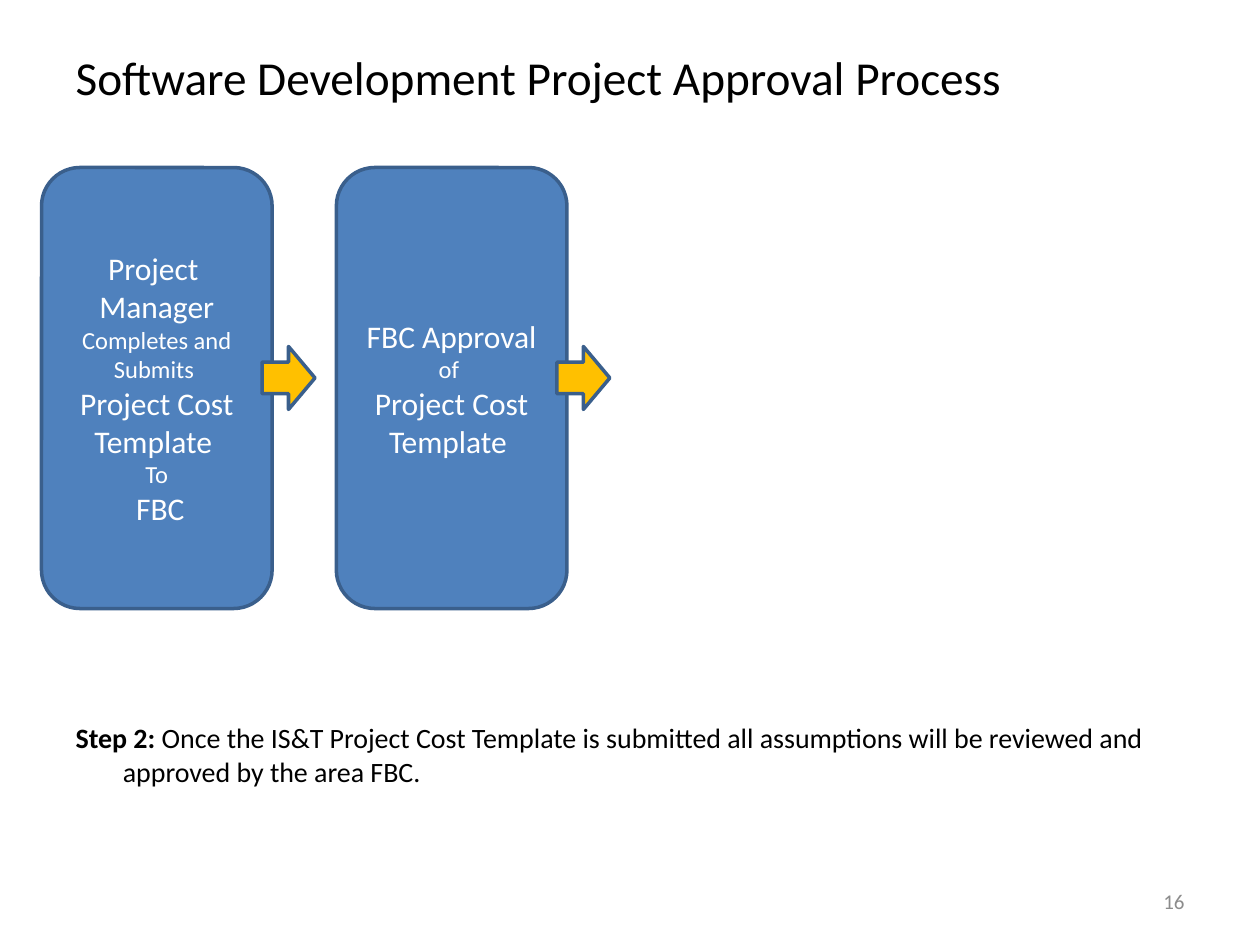
from lxml.etree import SubElement
from pptx import Presentation
from pptx.dml.color import RGBColor
from pptx.enum.shapes import MSO_SHAPE as Preset
from pptx.enum.text import MSO_ANCHOR as Anchor, MSO_AUTO_SIZE as AutoSize, PP_ALIGN as Align
from pptx.oxml.ns import qn
from pptx.util import Inches, Pt

FONT = "Calibri"
BLACK, WHITE, GREY = "000000", "FFFFFF", "8C8C8C"
BLUE, NAVY, GOLD = "4F81BD", "3A5F8C", "FFC000"

STEPS = [
    [
        [("Project  Manager ", 18), ("Completes and Submits ", 14)],
        [("Project Cost Template ", 18)],
        [("To", 14)],
        [(" FBC", 18)],
    ],
    [
        [("FBC Approval ", 18), ("of ", 14)],
        [("Project Cost Template ", 18)],
    ],
]


def color(hex_code):
    return RGBColor.from_string(hex_code)


def add_run(paragraph, words, size, ink, bold=False):
    run = paragraph.add_run()
    run.text = words
    run.font.name = FONT
    run.font.size = Pt(size)
    run.font.bold = bold
    run.font.color.rgb = color(ink)


def place(part, left, top, width, height):
    part.left, part.top = Inches(left), Inches(top)
    part.width, part.height = Inches(width), Inches(height)


def add_block(slide, preset, fill, left, top, width, height):
    block = slide.shapes.add_shape(
        preset, Inches(left), Inches(top), Inches(width), Inches(height))
    block.shadow.inherit = False
    block.fill.solid()
    block.fill.fore_color.rgb = color(fill)
    block.line.color.rgb = color(NAVY)
    block.line.width = Pt(2)
    return block


def add_heading(slide, left, top, width, height):
    heading = slide.shapes.title
    place(heading, left, top, width, height)
    frame = heading.text_frame
    frame.auto_size = AutoSize.NONE
    frame.vertical_anchor = Anchor.MIDDLE
    frame.paragraphs[0].alignment = Align.LEFT
    add_run(frame.paragraphs[0], "Software Development Project Approval Process", 27, BLACK)


def add_explanation(slide, left, top, width, height):
    explanation = slide.placeholders[1]
    place(explanation, left, top, width, height)
    frame = explanation.text_frame
    frame.auto_size = AutoSize.NONE
    paragraph = frame.paragraphs[0]
    SubElement(paragraph._p.get_or_add_pPr(), qn("a:buNone"))
    add_run(paragraph, "Step 2: ", 16, BLACK, bold=True)
    add_run(
        paragraph,
        "Once the IS&T Project Cost Template is submitted all assumptions "
        "will be reviewed and approved by the area FBC.",
        16, BLACK)


def add_step(slide, lines, left, top, width, height):
    card = add_block(slide, Preset.ROUNDED_RECTANGLE, BLUE, left, top, width, height)
    frame = card.text_frame
    frame.word_wrap = True
    frame.vertical_anchor = Anchor.MIDDLE
    for index, line in enumerate(lines):
        paragraph = frame.add_paragraph() if index else frame.paragraphs[0]
        paragraph.alignment = Align.CENTER
        for words, size in line:
            add_run(paragraph, words, size, WHITE)

    arrow_width, arrow_height, overlap = 0.42, 0.5, 0.08
    add_block(slide, Preset.RIGHT_ARROW, GOLD, left + width - overlap,
              top + (height - arrow_height) / 2 - 0.08, arrow_width, arrow_height)


def add_process(slide, left, top, width, height):
    step_width = 1.83
    pitch = (width - step_width) / (len(STEPS) - 1)
    for index, lines in enumerate(STEPS):
        add_step(slide, lines, left + index * pitch, top, step_width, height)


def add_page_number(slide, left, top, width, height):
    page_number = slide.shapes.add_textbox(
        Inches(left), Inches(top), Inches(width), Inches(height))
    frame = page_number.text_frame
    frame.word_wrap = True
    frame.vertical_anchor = Anchor.MIDDLE
    frame.paragraphs[0].alignment = Align.RIGHT
    add_run(frame.paragraphs[0], "16", 12, GREY)


def main():
    deck = Presentation()
    deck.slide_width, deck.slide_height = Inches(10), Inches(7.5)
    slide = deck.slides.add_slide(deck.slide_layouts[1])
    add_heading(slide, 0.5, 0.3, 9, 0.62)
    add_explanation(slide, 0.5, 5.67, 9, 1.03)
    add_process(slide, 0.33, 1.33, 4.17, 3.5)
    add_page_number(slide, 7.17, 6.95, 2.33, 0.4)
    deck.save("out.pptx")


if __name__ == "__main__":
    main()
